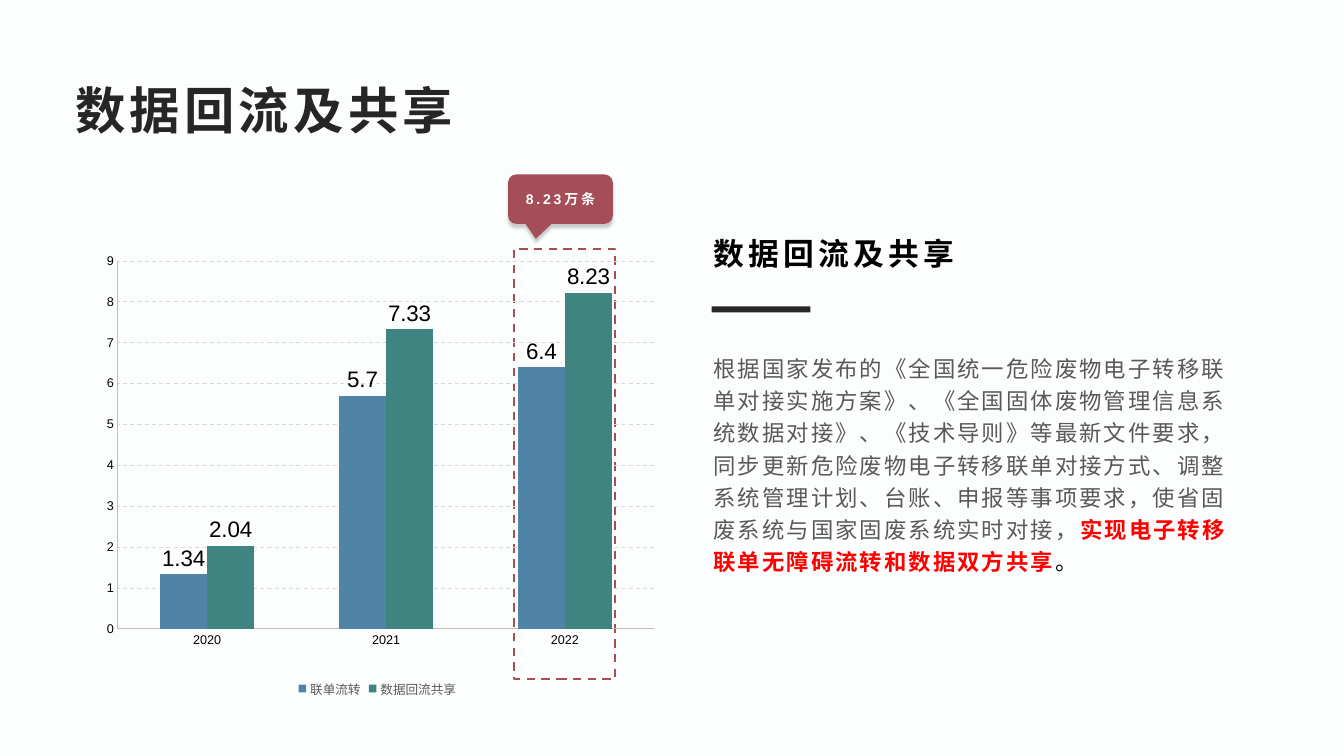
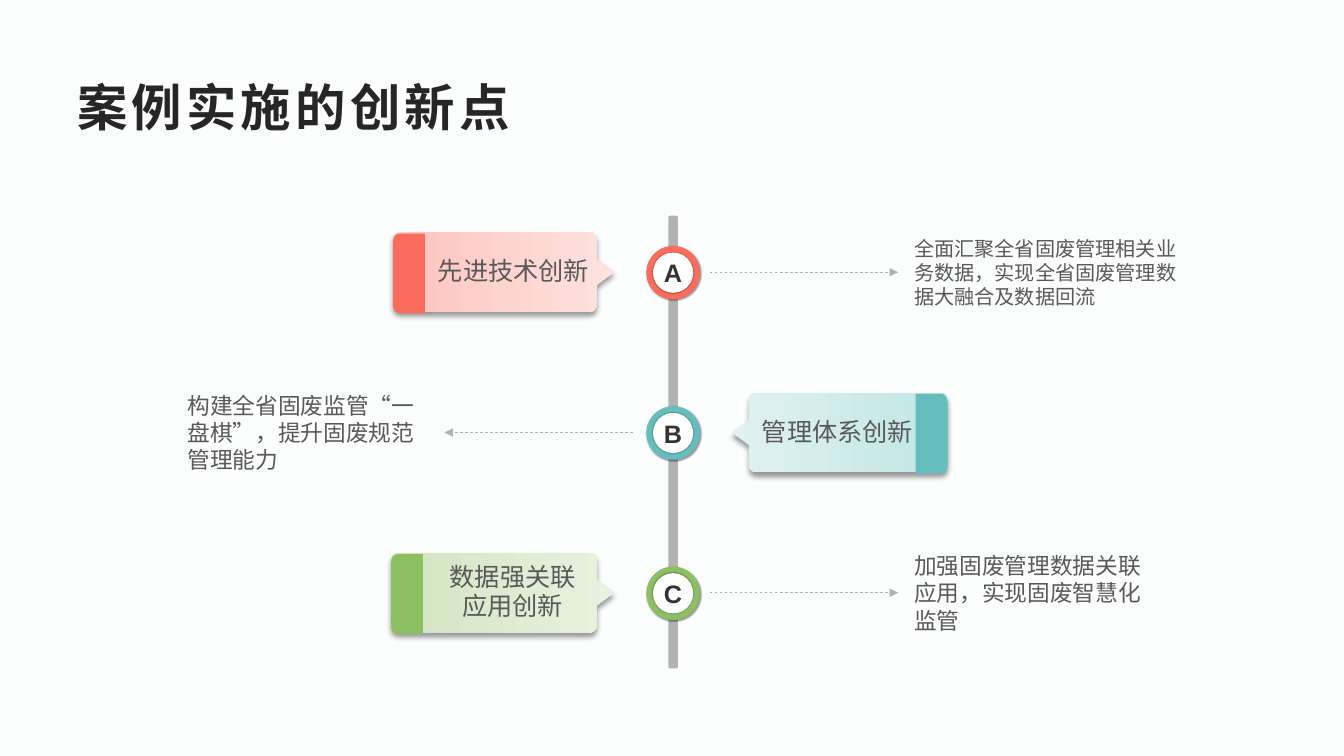
from dataclasses import dataclass
from math import cos, radians, sin

from lxml.etree import SubElement
from pptx import Presentation
from pptx.chart.data import CategoryChartData
from pptx.dml.color import RGBColor
from pptx.enum.chart import XL_CHART_TYPE as ChartType
from pptx.enum.chart import XL_LABEL_POSITION as LabelPosition
from pptx.enum.chart import XL_LEGEND_POSITION as LegendPosition
from pptx.enum.chart import XL_TICK_MARK as TickMark
from pptx.enum.dml import MSO_LINE as Dash
from pptx.enum.shapes import MSO_CONNECTOR as Connector
from pptx.enum.shapes import MSO_SHAPE as Preset
from pptx.enum.text import MSO_ANCHOR as Anchor
from pptx.enum.text import PP_ALIGN as Align
from pptx.oxml.ns import qn
from pptx.util import Pt

FONT = "Arial"
BACKGROUND = RGBColor(0xFC, 0xFD, 0xFD)
BLACK = RGBColor(0, 0, 0)
WHITE = RGBColor(255, 255, 255)
INK = RGBColor(0x26, 0x26, 0x26)
LETTER = RGBColor(0x33, 0x33, 0x33)
BODY = RGBColor(0x59, 0x59, 0x59)
GREY = RGBColor(0xB2, 0xB2, 0xB2)
AXIS_GREY = RGBColor(0xBF, 0xBF, 0xBF)
GRID_GREY = RGBColor(0xD9, 0xD9, 0xD9)
EMPHASIS = RGBColor(255, 0, 0)
WINE = RGBColor(0xA5, 0x4E, 0x57)
BLUE = RGBColor(0x4F, 0x84, 0xA6)
GREEN = RGBColor(0x40, 0x84, 0x81)


@dataclass(frozen=True)
class Box:
    left: float
    top: float
    width: float
    height: float

    def emu(self) -> tuple:
        return tuple(Pt(v) for v in (self.left, self.top, self.width, self.height))


@dataclass(frozen=True)
class Style:
    size: float
    color: RGBColor
    bold: bool = False
    spacing: float = 0
    leading: float = 1.0
    align: Align = Align.LEFT


@dataclass(frozen=True)
class Shadow:
    alpha: int
    blur: float
    distance: float
    angle: int


@dataclass(frozen=True)
class Innovation:
    letter: str
    label: tuple
    detail: str
    detail_size: float
    detail_left: float
    detail_width: float
    color: RGBColor
    tint: RGBColor
    pale: RGBColor
    label_edge: float
    label_tip: float
    arrow_start: float
    toward_axis: int  # 1: label left of the axis, -1: label right of it


@dataclass(frozen=True)
class Series:
    name: str
    values: tuple
    color: RGBColor


CALLOUT_SHADOW = Shadow(20, 2, 3, 90)
LABEL_SHADOW = Shadow(40, 4, 3, 90)
RING_SHADOW = Shadow(40, 1, 1, 45)
DISC_SHADOW = Shadow(40, 1, 0, 0)

YEARS = ("2020", "2021", "2022")
SERIES = (
    Series("联单流转", (1.34, 5.7, 6.4), BLUE),
    Series("数据回流共享", (2.04, 7.33, 8.23), GREEN),
)
POLICY = (
    ("根据国家发布的《全国统一危险废物电子转移联单对接实施方案》、《全国固体废物管理信息系统数据对接》、"
     "《技术导则》等最新文件要求，同步更新危险废物电子转移联单对接方式、调整系统管理计划、台账、"
     "申报等事项要求，使省固废系统与国家固废系统实时对接，", BODY, False),
    ("实现电子转移联单无障碍流转和数据双方共享", EMPHASIS, True),
    ("。", BLACK, False),
)
INNOVATIONS = (
    Innovation("A", ("先进技术创新",), "全面汇聚全省固废管理相关业务数据，实现全省固废管理数据大融合及数据回流",
               14.4, 653, 197.3, RGBColor(0xFC, 0x6C, 0x5C), RGBColor(0xFE, 0xC4, 0xBE),
               RGBColor(0xFE, 0xE2, 0xDE), 280.8, 438.5, 506.9, 1),
    Innovation("B", ("管理体系创新",), "构建全省固废监管“一盘棋”，提升固废规范管理能力",
               16.2, 133.9, 170.6, RGBColor(0x65, 0xBE, 0xBD), RGBColor(0xC1, 0xE5, 0xE5),
               RGBColor(0xE0, 0xF2, 0xF2), 676.8, 522.7, 452.2, -1),
    Innovation("C", ("数据强关联", "应用创新"), "加强固废管理数据关联应用，实现固废智慧化监管",
               16.2, 653, 170.6, RGBColor(0x8C, 0xBF, 0x62), RGBColor(0xD1, 0xE5, 0xC0),
               RGBColor(0xE8, 0xF2, 0xE0), 279.4, 438.5, 506.9, 1),
)
AXIS_X = 480.8
FIRST_ROW, ROW_PITCH = 194.4, 114.5
LABEL_HEIGHT, BAND_WIDTH, CORNER = 57, 22.7, 5.2
POINTER_DEPTH, POINTER_HALF = 12.3, 9
ARROW_LENGTH = 134.6


def cast_shadow(shape, shadow: Shadow | None) -> None:
    """Replace the theme shadow with the given one, or with none."""
    shape.shadow.inherit = False
    if shadow:
        effects = shape._element.spPr.find(qn("a:effectLst"))
        outer = SubElement(effects, qn("a:outerShdw"), blurRad=str(Pt(shadow.blur)),
                           dist=str(Pt(shadow.distance)), dir=str(shadow.angle * 60000),
                           algn="ctr", rotWithShape="0")
        color = SubElement(outer, qn("a:srgbClr"), val="000000")
        SubElement(color, qn("a:alpha"), val=str(shadow.alpha * 1000))


def style_paragraph(paragraph, style: Style) -> None:
    paragraph.alignment = style.align
    paragraph.line_spacing = style.leading
    font = paragraph.font
    font.name, font.size, font.bold = FONT, Pt(style.size), style.bold
    font.color.rgb = style.color
    if style.spacing:
        defaults = paragraph._p.get_or_add_pPr().get_or_add_defRPr()
        defaults.set("spc", str(round(style.spacing * 100)))


def write(shape, lines: tuple, style: Style, anchor: Anchor = Anchor.MIDDLE,
          insets: tuple | None = None) -> None:
    frame = shape.text_frame
    frame.word_wrap = True
    frame.vertical_anchor = anchor
    if insets:
        (frame.margin_left, frame.margin_top,
         frame.margin_right, frame.margin_bottom) = (Pt(v) for v in insets)
    for index, line in enumerate(lines):
        paragraph = frame.paragraphs[0] if index == 0 else frame.add_paragraph()
        paragraph.add_run().text = line
        style_paragraph(paragraph, style)


def add_text(slide, box: Box, text: str, style: Style, insets: tuple | None = None) -> None:
    write(slide.shapes.add_textbox(*box.emu()), (text,), style, insets=insets)


def add_preset(slide, preset: Preset, box: Box, fill: RGBColor | None,
               shadow: Shadow | None = None):
    shape = slide.shapes.add_shape(preset, *box.emu())
    if fill is None:
        shape.fill.background()
    else:
        shape.fill.solid()
        shape.fill.fore_color.rgb = fill
    shape.line.fill.background()
    cast_shadow(shape, shadow)
    return shape


def add_disc(slide, center_y: float, diameter: float, fill: RGBColor, shadow: Shadow):
    box = Box(AXIS_X - diameter / 2, center_y - diameter / 2, diameter, diameter)
    return add_preset(slide, Preset.OVAL, box, fill, shadow)


def arc(x: float, y: float, start: int) -> list:
    """Points of a quarter turn of the corner radius around (x, y)."""
    angles = (radians(start + step * 15) for step in range(7))
    return [(x + CORNER * cos(a), y + CORNER * sin(a)) for a in angles]


def add_outline(slide, edge: float, top: float, toward_axis: int, points: list):
    """Draw a closed outline; points run inward from the outer edge."""
    emu = [(Pt(edge + toward_axis * x), Pt(top + y)) for x, y in points]
    builder = slide.shapes.build_freeform(*emu[0])
    builder.add_line_segments(emu[1:], close=True)
    shape = builder.convert_to_shape()
    shape.line.fill.background()
    return shape


def add_label(slide, item: Innovation, center_y: float) -> None:
    top, height = center_y - LABEL_HEIGHT / 2, LABEL_HEIGHT
    width = abs(item.label_tip - item.label_edge)
    body, middle = width - POINTER_DEPTH, height / 2
    outer_top = arc(CORNER, CORNER, 180)
    outer_bottom = arc(CORNER, height - CORNER, 90)
    pointer = [(body, middle - POINTER_HALF), (width, middle), (body, middle + POINTER_HALF)]
    label = add_outline(slide, item.label_edge, top, item.toward_axis,
                        outer_top + arc(body - CORNER, CORNER, 270) + pointer
                        + arc(body - CORNER, height - CORNER, 0) + outer_bottom)
    label.fill.gradient()
    label.fill.gradient_angle = 0
    colors = (item.tint, item.pale)[::item.toward_axis]
    for stop, color in zip(label.fill.gradient_stops, colors):
        stop.color.rgb = color
    cast_shadow(label, LABEL_SHADOW)
    insets = (14.4, 0, 0, 0) if item.toward_axis > 0 else (0, 0, 2.9, 0)
    write(label, item.label, Style(18, BODY, leading=0.96, align=Align.CENTER), insets=insets)

    band = add_outline(slide, item.label_edge, top + 0.9, item.toward_axis,
                       outer_top + [(BAND_WIDTH, 0), (BAND_WIDTH, height)] + outer_bottom)
    band.fill.solid()
    band.fill.fore_color.rgb = item.color
    cast_shadow(band, None)


def add_arrow(slide, start: float, end: float, y: float) -> None:
    arrow = slide.shapes.add_connector(Connector.STRAIGHT, Pt(start), Pt(y), Pt(end), Pt(y))
    arrow.line.color.rgb, arrow.line.width = GREY, Pt(0.5)
    arrow.line.dash_style = Dash.DASH
    SubElement(arrow.line._get_or_add_ln(), qn("a:tailEnd"), type="triangle")
    SubElement(arrow._element.spPr, qn("a:effectLst"))


def add_innovation(slide, item: Innovation, center_y: float) -> None:
    add_disc(slide, center_y + 0.4, 38.2, item.color, RING_SHADOW)
    add_label(slide, item, center_y)
    add_text(slide, Box(item.detail_left, center_y - 27.6, item.detail_width, 55.4),
             item.detail, Style(item.detail_size, BODY), (0, 0, 0, 0))
    disc = add_disc(slide, center_y + 0.4, 28.8, WHITE, DISC_SHADOW)
    write(disc, (item.letter,), Style(18, LETTER, True, align=Align.CENTER), insets=(0, 0, 0, 0))
    add_arrow(slide, item.arrow_start, item.arrow_start + item.toward_axis * ARROW_LENGTH, center_y)


def set_font(font, size: float, color: RGBColor) -> None:
    font.name, font.size, font.color.rgb = FONT, Pt(size), color


def add_flow_chart(slide, box: Box) -> None:
    data = CategoryChartData()
    data.categories = YEARS
    for series in SERIES:
        data.add_series(series.name, series.values)
    chart = slide.shapes.add_chart(ChartType.COLUMN_CLUSTERED, *box.emu(), data).chart
    chart.has_title = False
    set_font(chart.font, 10, BLACK)
    chart.has_legend = True
    chart.legend.position = LegendPosition.BOTTOM
    chart.legend.include_in_layout = False
    set_font(chart.legend.font, 9, BODY)

    for axis in (chart.category_axis, chart.value_axis):
        axis.major_tick_mark = axis.minor_tick_mark = TickMark.NONE
        set_font(axis.tick_labels.font, 9, BLACK)
        axis.format.line.color.rgb, axis.format.line.width = AXIS_GREY, Pt(0.75)
    values = chart.value_axis
    values.minimum_scale, values.maximum_scale, values.major_unit = 0, 9, 1
    grid = values.major_gridlines.format.line
    grid.color.rgb, grid.width, grid.dash_style = GRID_GREY, Pt(0.75), Dash.DASH

    plot = chart.plots[0]
    plot.gap_width, plot.overlap, plot.vary_by_categories = 180, 0, False
    for drawn, series in zip(plot.series, SERIES):
        drawn.format.fill.solid()
        drawn.format.fill.fore_color.rgb = series.color
        labels = drawn.data_labels
        labels.show_value, labels.position = True, LabelPosition.OUTSIDE_END
        set_font(labels.font, 16, BLACK)

    area = chart._chartSpace.chart.plotArea
    for old in area.findall(qn("c:layout")):
        area.remove(old)
    layout = SubElement(area, qn("c:layout"))
    area.insert(0, layout)
    manual = SubElement(layout, qn("c:manualLayout"))
    for tag, value in (("layoutTarget", "inner"), ("xMode", "edge"), ("yMode", "edge"),
                       ("x", "0.052"), ("y", "0.027"), ("w", "0.926"), ("h", "0.813")):
        SubElement(manual, qn(f"c:{tag}"), val=value)


def add_titled_slide(deck, title: str, left: float, leading: float):
    slide = deck.slides.add_slide(deck.slide_layouts[6])
    slide.background.fill.solid()
    slide.background.fill.fore_color.rgb = BACKGROUND
    add_text(slide, Box(left, 48.2, 864, 55.4), title, Style(36, INK, True, 3, leading))
    return slide


def build_sharing_slide(deck) -> None:
    heading = "数据回流及共享"
    slide = add_titled_slide(deck, heading, 46.8, 1.1)
    add_text(slide, Box(502.6, 154, 375.8, 48.2), heading, Style(22, BLACK, True, 3, 1.2))
    add_preset(slide, Preset.RECTANGLE, Box(508.3, 218.9, 70.6, 4.3), INK)
    highlight = add_preset(slide, Preset.RECTANGLE, Box(367.2, 177.8, 72, 307.4), None)
    highlight.line.color.rgb, highlight.line.width = WINE, Pt(1.5)
    highlight.line.dash_style = Dash.DASH
    add_flow_chart(slide, Box(62.6, 177.8, 414, 323.3))

    callout = add_preset(slide, Preset.ROUNDED_RECTANGULAR_CALLOUT,
                         Box(362.9, 124.6, 74.9, 35.3), WINE, CALLOUT_SHADOW)
    for index, value in enumerate((-0.235, 0.801, 0.167)):
        callout.adjustments[index] = value
    write(callout, ("8.23万条",), Style(10, WHITE, True, 2, align=Align.CENTER))

    policy = slide.shapes.add_textbox(*Box(502.6, 246.2, 385.2, 216.7).emu())
    write(policy, (POLICY[0][0],), Style(16, BODY, spacing=1.5, leading=1.2), Anchor.TOP)
    paragraph = policy.text_frame.paragraphs[0]
    for text, color, bold in POLICY[1:]:
        run = paragraph.add_run()
        run.text, run.font.bold, run.font.color.rgb = text, bold, color


def build_innovation_slide(deck) -> None:
    slide = add_titled_slide(deck, "案例实施的创新点", 48.2, 1.0)
    add_preset(slide, Preset.ROUNDED_RECTANGLE, Box(AXIS_X - 3.4, 154.1, 6.8, 323.3), GREY)
    for row, item in enumerate(INNOVATIONS):
        add_innovation(slide, item, FIRST_ROW + row * ROW_PITCH)


def main() -> None:
    deck = Presentation()
    deck.slide_width, deck.slide_height = Pt(960), Pt(540)
    build_sharing_slide(deck)
    build_innovation_slide(deck)
    deck.save("out.pptx")


if __name__ == "__main__":
    main()
